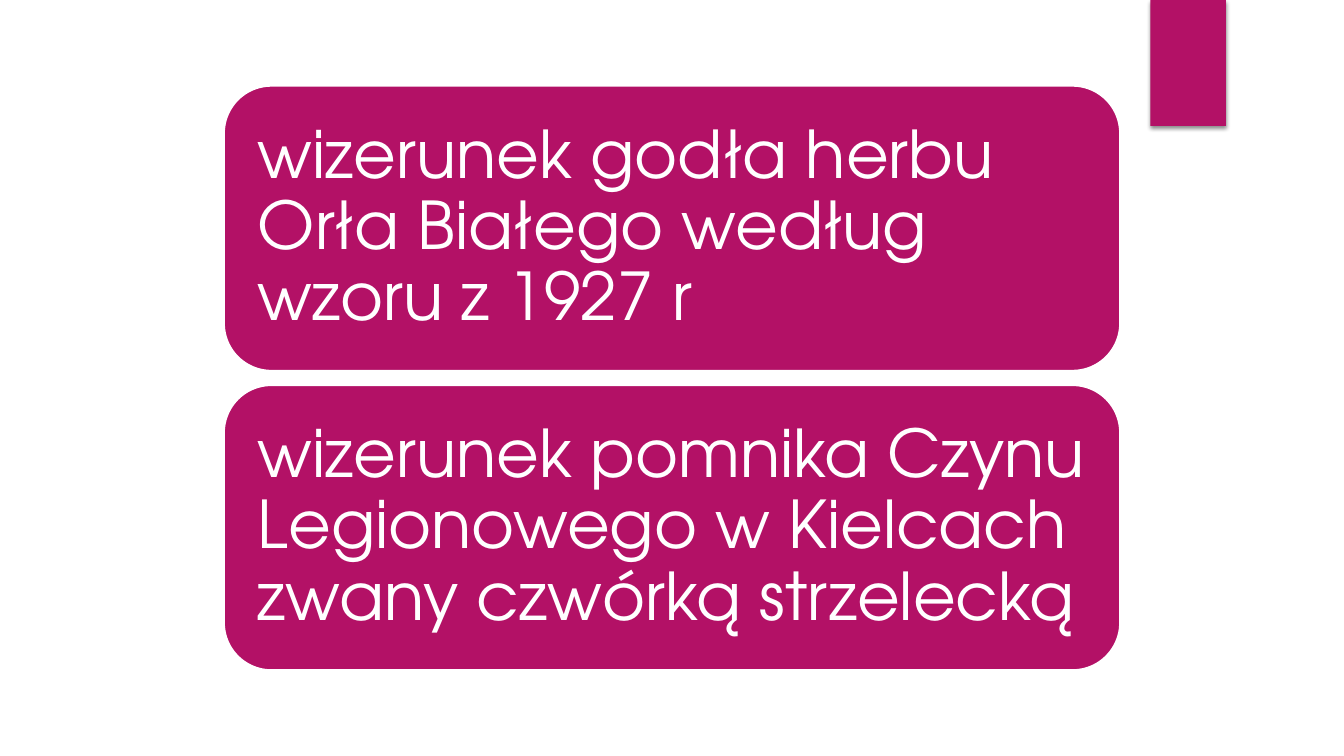
from lxml import etree
from pptx import Presentation
from pptx.dml.color import RGBColor
from pptx.enum.shapes import MSO_SHAPE as Shape
from pptx.enum.text import MSO_ANCHOR as Anchor, PP_ALIGN as Align
from pptx.oxml.ns import qn
from pptx.util import Inches, Pt

SLIDE_WIDTH, SLIDE_HEIGHT = 13.33, 7.5
CARD_LEFT, CARD_TOP = 2.22, 0.85
CARD_WIDTH, CARD_HEIGHT, CARD_GAP = 8.89, 2.83, 0.14
CARD_TEXTS = [
    "wizerunek godła herbu Orła Białego według wzoru z 1927 r",
    "wizerunek pomnika Czynu Legionowego w Kielcach zwany czwórką strzelecką",
]


def color(hex_string):
    return RGBColor.from_string(hex_string)


class SlideBuilder:
    accent = "B31166"
    light = "FFFFFF"
    font_name = "TeX Gyre Adventor"
    font_size = Pt(47)

    def __init__(self, slide):
        self.slide = slide

    def block(self, preset, left, top, width, height):
        """Add an accent-filled shape without line or shadow; lengths are shares of the slide."""
        shape = self.slide.shapes.add_shape(
            preset,
            Inches(left * SLIDE_WIDTH), Inches(top * SLIDE_HEIGHT),
            Inches(width * SLIDE_WIDTH), Inches(height * SLIDE_HEIGHT),
        )
        shape.shadow.inherit = False
        shape.fill.solid()
        shape.fill.fore_color.rgb = color(self.accent)
        shape.line.fill.background()
        return shape

    def ribbon(self, left, top, width, height):
        """Add a rectangle with a soft shadow straight below it."""
        shape = self.block(Shape.RECTANGLE, left, top, width, height)
        effects = shape._element.spPr.find(qn("a:effectLst"))
        shadow = etree.SubElement(
            effects, qn("a:outerShdw"), blurRad=str(Pt(3)), dist=str(Pt(2)),
            dir="5400000", rotWithShape="0",
        )
        shadow_color = etree.SubElement(shadow, qn("a:srgbClr"), val="000000")
        etree.SubElement(shadow_color, qn("a:alpha"), val="45000")

    def card(self, text, left, top, width, height):
        shape = self.block(Shape.ROUNDED_RECTANGLE, left, top, width, height)
        shape.line.color.rgb = color(self.light)
        shape.line.width = Pt(1.5)
        frame = shape.text_frame
        frame.word_wrap = True
        frame.vertical_anchor = Anchor.MIDDLE
        frame.margin_left = frame.margin_right = Inches(0.2)
        frame.margin_top = frame.margin_bottom = Inches(0.2)
        paragraph = frame.paragraphs[0]
        paragraph.text = text
        paragraph.alignment = Align.LEFT
        paragraph.line_spacing = 0.9
        paragraph.font.name = self.font_name
        paragraph.font.size = self.font_size
        paragraph.font.color.rgb = color(self.light)


def main():
    presentation = Presentation()
    presentation.slide_width = Inches(SLIDE_WIDTH)
    presentation.slide_height = Inches(SLIDE_HEIGHT)
    blank_layout = presentation.slide_layouts[6]
    builder = SlideBuilder(presentation.slides.add_slide(blank_layout))

    builder.ribbon(11.41 / SLIDE_WIDTH, 0, 0.75 / SLIDE_WIDTH, 1.25 / SLIDE_HEIGHT)
    for row, text in enumerate(CARD_TEXTS):
        top = CARD_TOP + row * (CARD_HEIGHT + CARD_GAP)
        builder.card(
            text, CARD_LEFT / SLIDE_WIDTH, top / SLIDE_HEIGHT,
            CARD_WIDTH / SLIDE_WIDTH, CARD_HEIGHT / SLIDE_HEIGHT,
        )
    presentation.save("out.pptx")


if __name__ == "__main__":
    main()
